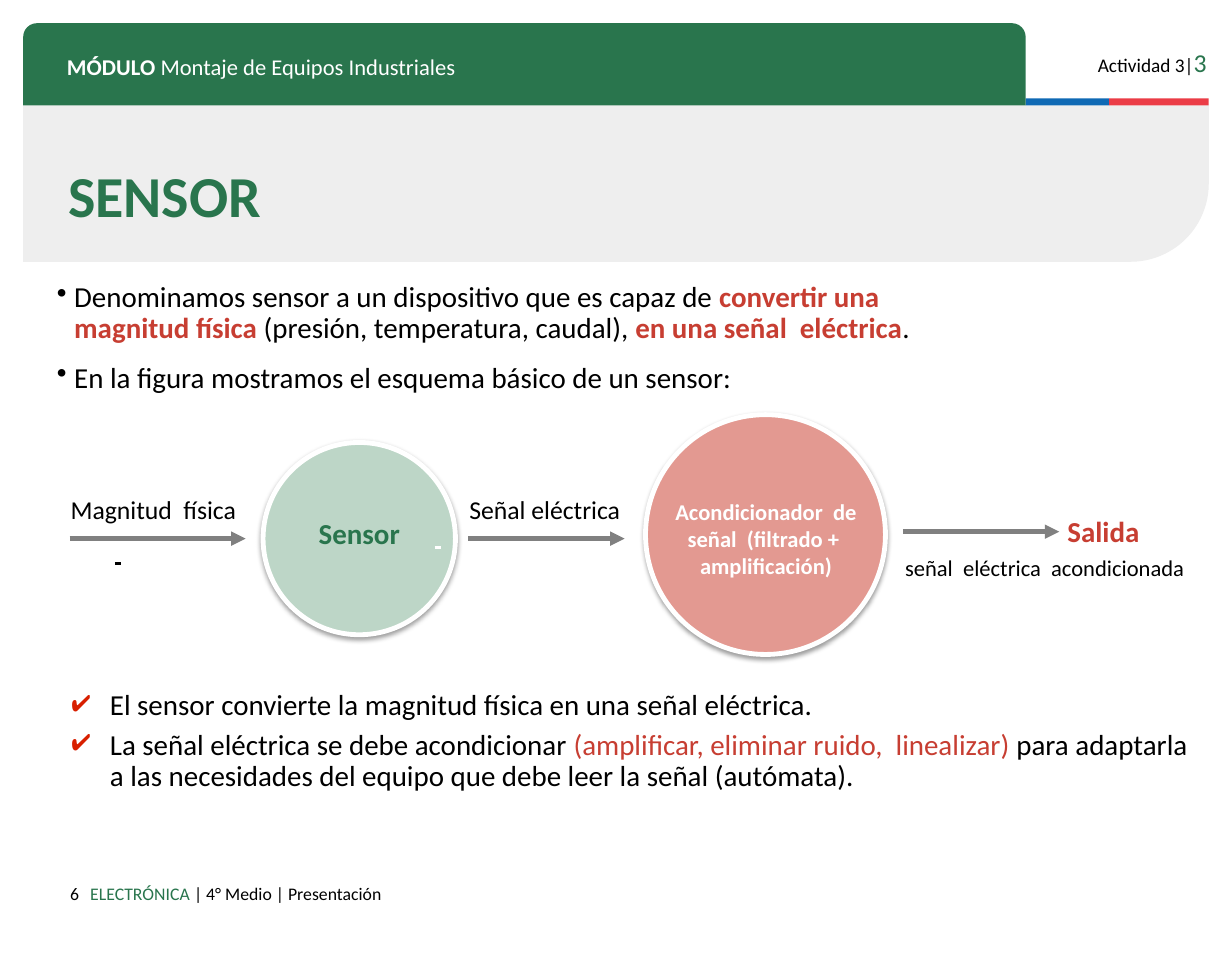
from dataclasses import dataclass

from lxml import etree
from pptx import Presentation
from pptx.dml.color import RGBColor
from pptx.enum.shapes import MSO_CONNECTOR as Connector, MSO_SHAPE as Shape
from pptx.enum.text import PP_ALIGN as Align
from pptx.oxml.ns import qn
from pptx.util import Inches, Pt

FONT = "Calibri"
COLORS = {
    "green": "29754D", "pale_green": "BDD6C7", "red": "C73E32",
    "pale_red": "E39991", "check": "D81F00", "flag_blue": "0F69B4",
    "flag_red": "EB3C46", "band": "EEEEEE", "arrow": "808080",
    "white": "FFFFFF", "black": "000000",
}


@dataclass
class Run:
    text: str
    size: float
    color: str = "black"
    bold: bool = False
    underline: bool = False


@dataclass
class Line:
    runs: list
    left: float = 0
    spacing: float = 1
    before: float = 0
    align: Align = Align.LEFT
    bullet: str = ""
    bullet_color: str = "black"


def rgb(name):
    return RGBColor.from_string(COLORS[name])


def add_bullet(paragraph, line):
    """Hang the paragraph's bullet in its left margin."""
    properties = paragraph._p.get_or_add_pPr()
    properties.set("indent", str(-Inches(line.left)))
    color = etree.SubElement(properties, qn("a:buClr"))
    etree.SubElement(color, qn("a:srgbClr"), val=COLORS[line.bullet_color])
    etree.SubElement(properties, qn("a:buChar"), char=line.bullet)


def add_text(slide, box, lines, inset=(0, 0), wrap=True):
    frame = slide.shapes.add_textbox(*map(Inches, box)).text_frame
    frame.word_wrap = wrap
    frame.margin_left = frame.margin_right = Inches(inset[0])
    frame.margin_top = frame.margin_bottom = Inches(inset[1])
    for index, line in enumerate(lines):
        paragraph = frame.add_paragraph() if index else frame.paragraphs[0]
        paragraph.alignment = line.align
        paragraph.line_spacing = line.spacing
        paragraph.space_before = Pt(line.before)
        paragraph._p.get_or_add_pPr().set("marL", str(Inches(line.left)))
        if line.bullet:
            add_bullet(paragraph, line)
        for part in line.runs:
            run = paragraph.add_run()
            run.text = part.text
            run.font.name = FONT
            run.font.size = Pt(part.size)
            run.font.bold = part.bold
            run.font.underline = part.underline
            run.font.color.rgb = rgb(part.color)


def add_block(slide, kind, box, color):
    block = slide.shapes.add_shape(kind, *map(Inches, box))
    block.shadow.inherit = False
    block.fill.solid()
    block.fill.fore_color.rgb = rgb(color)
    block.line.fill.background()
    return block


def add_stage(slide, left, top, diameter, color):
    """Draw a white-rimmed circle with a soft shadow below it."""
    circle = add_block(slide, Shape.OVAL, (left, top, diameter, diameter), color)
    circle.line.color.rgb = rgb("white")
    circle.line.width = Pt(3)
    effects = circle._element.spPr.find(qn("a:effectLst"))
    shadow = etree.SubElement(
        effects, qn("a:outerShdw"), blurRad=str(Pt(3.1)), dist=str(Pt(1.6)),
        dir="5400000", rotWithShape="0")
    tint = etree.SubElement(shadow, qn("a:srgbClr"), val=COLORS["black"])
    etree.SubElement(tint, qn("a:alpha"), val="38000")


def add_arrow(slide, left, y, length):
    arrow = slide.shapes.add_connector(
        Connector.STRAIGHT, *map(Inches, (left, y, left + length, y)))
    arrow.line.color.rgb = rgb("arrow")
    arrow.line.width = Pt(3)
    etree.SubElement(arrow.line._get_or_add_ln(), qn("a:tailEnd"), type="triangle")
    etree.SubElement(arrow._element.spPr, qn("a:effectLst"))


def add_header(slide, left, top, width, height):
    tab_width, tab_height, stripe, blue_width = 8.65, 0.71, 0.06, 0.72
    tab_right, tab_bottom = left + tab_width, top + tab_height
    band = add_block(slide, Shape.ROUND_1_RECTANGLE,
                     (left, tab_bottom, width, height - tab_height), "band")
    band.adjustments[0] = 0.5
    band.rotation = 180
    band._element.spPr.xfrm.set("flipH", "1")
    add_block(slide, Shape.RECTANGLE,
              (tab_right, tab_bottom - stripe, blue_width, stripe), "flag_blue")
    add_block(slide, Shape.RECTANGLE,
              (tab_right + blue_width, tab_bottom - stripe,
               width - tab_width - blue_width, stripe), "flag_red")
    tab = add_block(slide, Shape.ROUND_2_SAME_RECTANGLE,
                    (left, top, tab_width, tab_height), "green")
    tab.adjustments[0] = 0.167
    add_text(slide, (left + 0.28, top + 0.21, 8.14, 0.35), [Line([
        Run("MÓDULO ", 14, "white", True),
        Run("Montaje de Equipos Industriales", 14, "white")], spacing=0.8)],
        (0.1, 0.1))
    add_text(slide, (left + 9.03, top + 0.1, 1.28, 0.38), [Line([
        Run("Actividad 3|", 12), Run("3", 16, "green")], align=Align.RIGHT)],
        (0.1, 0.1))
    add_text(slide, (left + 0.29, top + 1.13, 9.88, 0.7),
             [Line([Run("SENSOR", 36, "green", True)])], (0.1, 0.05))


def add_definition(slide, box):
    bullet = {"left": 0.15, "bullet": "•"}
    add_text(slide, box, [
        Line([Run("Denominamos sensor a un dispositivo que es capaz de ", 18),
              Run("convertir una magnitud física ", 18, "red", True),
              Run("(presión, temperatura, caudal), ", 18),
              Run("en una señal  eléctrica", 18, "red", True),
              Run(".", 18)], spacing=0.9, **bullet),
        Line([Run("En la figura mostramos el esquema básico de un sensor:", 18)],
             spacing=1.12, before=6, **bullet)])


def add_diagram(slide, left, top):
    """Draw the signal chain from physical quantity to output."""
    add_stage(slide, left + 1.67, top + 0.24, 1.66, "pale_green")
    add_stage(slide, left + 4.97, top, 2.07, "pale_red")
    for x, y, length in ((0, 1.07, 1.52), (3.44, 1.07, 1.35), (7.19, 1.01, 1.35)):
        add_arrow(slide, left + x, top + y, length)
    labels = [
        ((0, 0.68, 1.72, 0.63), [
            Line([Run("Magnitud  física", 16)], 0.01, 1.02),
            Line([Run(" ", 18, underline=True)], 0.39, before=4.3)]),
        ((2.14, 0.87, 2.06, 0.3), [
            Line([Run("Sensor\t", 18, "green", True),
                  Run(" ", 18, "white", True, True)], 0.01)]),
        ((3.44, 0.68, 1.62, 0.27), [Line([Run("Señal eléctrica", 16)], 0.01)]),
        ((5.14, 0.73, 1.73, 0.7), [
            Line([Run("Acondicionador  de señal  (filtrado +  amplificación)",
                      14, "white", True)], 0.01, 0.99, align=Align.CENTER)]),
        ((8.57, 0.85, 1.4, 0.31), [
            Line([Run("Salida", 18, "red", True)], 0.04, 1.01)]),
    ]
    for (x, y, width, height), lines in labels:
        add_text(slide, (left + x, top + y, width, height), lines)
    add_text(slide, (left + 7.07, top + 1.15, 2.68, 0.34),
             [Line([Run("señal  eléctrica  acondicionada", 14)], 0.04, 1.01)],
             (0.1, 0.05), wrap=False)


def add_conclusions(slide, box):
    check = {"left": 0.33, "bullet": "✔", "bullet_color": "check"}
    add_text(slide, box, [
        Line([Run("El sensor convierte la magnitud física en una señal eléctrica.",
                  18)], **check),
        Line([Run("La señal eléctrica se debe acondicionar ", 18),
              Run("(amplificar, eliminar ruido,  linealizar) ", 18, "red"),
              Run("para adaptarla a las necesidades del equipo que debe leer "
                  "la señal (autómata).", 18)],
             spacing=0.91, before=5.2, **check)], (0.1, 0.05))


def add_footer(slide, left, top):
    add_text(slide, (left, top, 0.58, 0.29),
             [Line([Run("6", 11)], align=Align.RIGHT)], (0.1, 0.1))
    add_text(slide, (left + 0.21, top, 7.42, 0.38), [Line([
        Run("ELECTRÓNICA ", 11, "green"),
        Run("| 4° Medio | Presentación", 11)], left=0.27)], (0.1, 0.1))


def main():
    deck = Presentation()
    deck.slide_width, deck.slide_height = Inches(10.63), Inches(8.27)
    slide = deck.slides.add_slide(deck.slide_layouts[6])
    add_header(slide, 0.2, 0.2, 10.23, 2.06)
    add_definition(slide, (0.49, 2.44, 7.88, 1.29))
    add_diagram(slide, 0.6, 3.58)
    add_conclusions(slide, (0.52, 5.88, 9.94, 1.02))
    add_footer(slide, 0.2, 7.53)
    deck.save("out.pptx")


if __name__ == "__main__":
    main()
